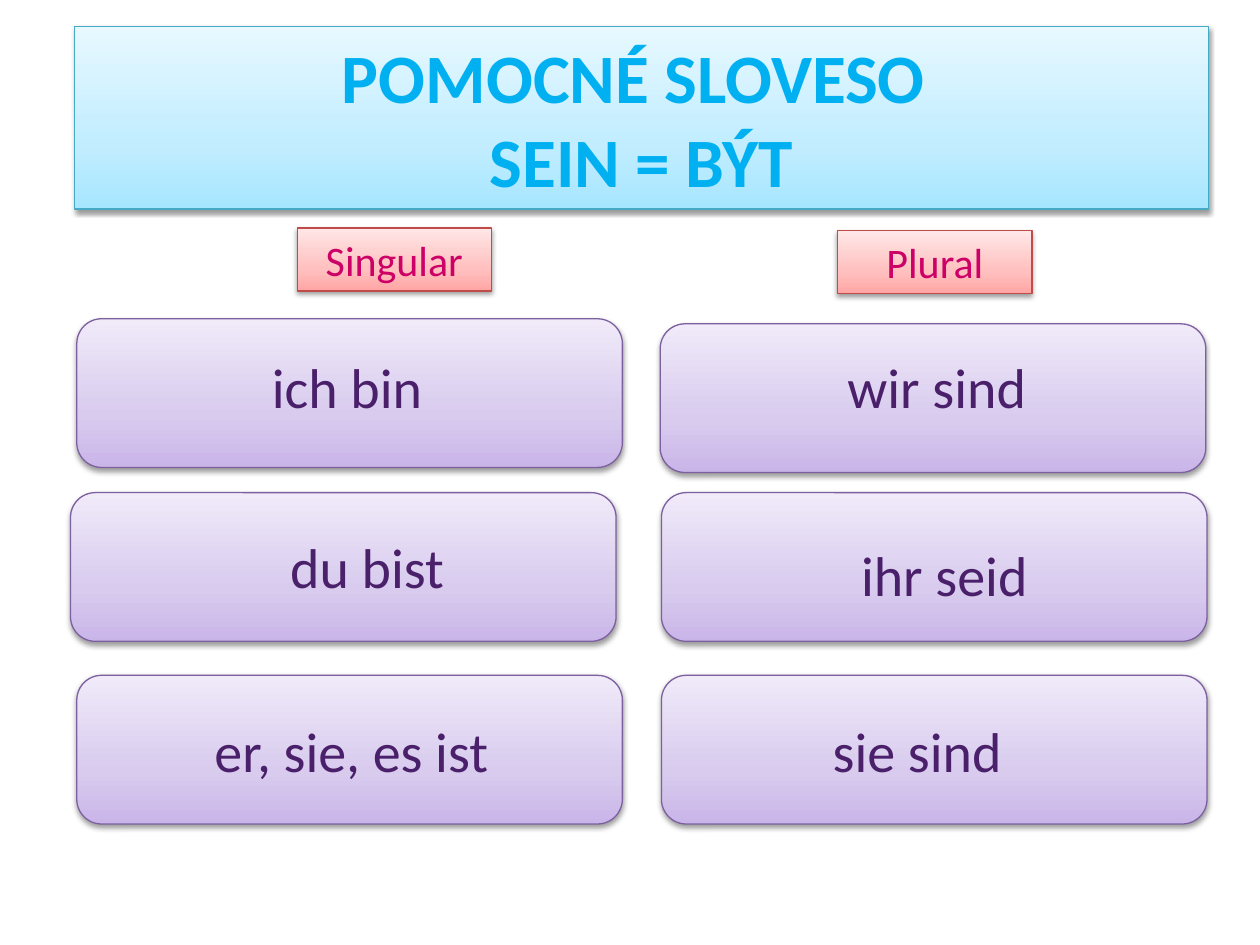
from copy import deepcopy
from lxml.etree import SubElement
from pptx import Presentation
from pptx.dml.color import RGBColor
from pptx.enum.shapes import MSO_SHAPE
from pptx.enum.text import MSO_ANCHOR, MSO_AUTO_SIZE, PP_ALIGN
from pptx.oxml.ns import qn
from pptx.util import Inches, Pt

# The slide is a grid of 100 columns by 75 rows.
COLS, ROWS = 100, 75
UNIT = Inches(0.1)

INK = {"title": "00B0F0", "head": "CC0066", "verb": "4A206A", "shadow": "000000"}
LINE = {"title": "46AAC5", "head": "BF4C48", "verb": "7D60A0"}
FADE = {
    "title": ("A7E6FF", "C1EDFF", "E7F8FF"),
    "head": ("FFA6A5", "FFC0BF", "FFE7E7"),
    "verb": ("C9B5E8", "D8CBEE", "F0EAF9"),
}
FONT = {
    "title": {"size": Pt(39.6), "bold": True},
    "head": {"size": Pt(24), "bold": False},
    "verb": {"size": Pt(32), "bold": False},
}


def paint(shape, kind):
    """Give a shape the three-stop fade, outline and soft shadow of its kind."""
    shape.fill.gradient()
    shape.fill.gradient_angle = 90
    stops = shape.fill.gradient_stops
    last = stops[1]._stop if hasattr(stops[1], "_stop") else None
    if last is None:
        last = shape.element.spPr.findall(".//" + qn("a:gs"))[1]
    last.addprevious(deepcopy(last))
    for stop, spot, tone in zip(shape.fill.gradient_stops, (0, 0.35, 1), FADE[kind]):
        stop.position = spot
        stop.color.rgb = RGBColor.from_string(tone)
    shape.line.color.rgb = RGBColor.from_string(LINE[kind])
    shape.line.width = Pt(0.75)
    shape.shadow.inherit = False
    glow = SubElement(
        shape.element.spPr.find(qn("a:effectLst")), qn("a:outerShdw"),
        blurRad=str(Pt(3.1)), dist=str(Pt(1.6)), dir="5400000", rotWithShape="0",
    )
    tint = SubElement(glow, qn("a:srgbClr"), val=INK["shadow"])
    SubElement(tint, qn("a:alpha"), val="38000")


def write(shape, text, kind, anchor=MSO_ANCHOR.TOP):
    frame = shape.text_frame
    frame.text = text
    look = {"word_wrap": True, "auto_size": MSO_AUTO_SIZE.NONE, "vertical_anchor": anchor}
    for name, value in look.items():
        setattr(frame, name, value)
    para = frame.paragraphs[0]
    para.alignment = PP_ALIGN.CENTER
    for run in para.runs:
        for name, value in {"name": "Calibri", **FONT[kind]}.items():
            setattr(run.font, name, value)
        run.font.color.rgb = RGBColor.from_string(INK[kind])


deck = Presentation()
deck.slide_width, deck.slide_height = COLS * UNIT, ROWS * UNIT
slide = deck.slides.add_slide(deck.slide_layouts[5])
shapes = slide.shapes

title = shapes.title
place = {"left": 5.9, "top": 2.1, "width": 90, "height": 14.5}
for name, value in place.items():
    setattr(title, name, int(value * UNIT))
paint(title, "title")
write(title, "POMOCNÉ SLOVESO \vSEIN = BÝT", "title", MSO_ANCHOR.MIDDLE)

# Card column and row, then wording with its own column, row and width.
verbs = [
    (6.1, 25.3, "ich bin", 13, 27.5, 29.1),
    (5.6, 39.1, "du bist", 13, 41.8, 32.3),
    (6.1, 53.6, "er, sie, es ist", 8.3, 56.4, 39.2),
    (52.4, 25.7, "wir sind", 56.9, 27.5, 34.9),
    (52.5, 39.1, "ihr seid", 59, 42.4, 31.9),
    (52.5, 53.6, "sie sind", 57.9, 56.4, 29.8),
]
for col, row, *_ in verbs:
    spot = [int(n * UNIT) for n in (col, row, 43.3, 11.8)]
    paint(shapes.add_shape(MSO_SHAPE.ROUNDED_RECTANGLE, *spot), "verb")
for *_, text, col, row, wide in verbs:
    spot = [int(n * UNIT) for n in (col, row, wide, 6.4)]
    write(shapes.add_textbox(*spot), text, "verb")

for col, row, text in [(23.6, 18.1, "Singular"), (66.5, 18.3, "Plural")]:
    spot = [int(n * UNIT) for n in (col, row, 15.4, 5)]
    head = shapes.add_shape(MSO_SHAPE.RECTANGLE, *spot)
    paint(head, "head")
    write(head, text, "head")

deck.save("out.pptx")
